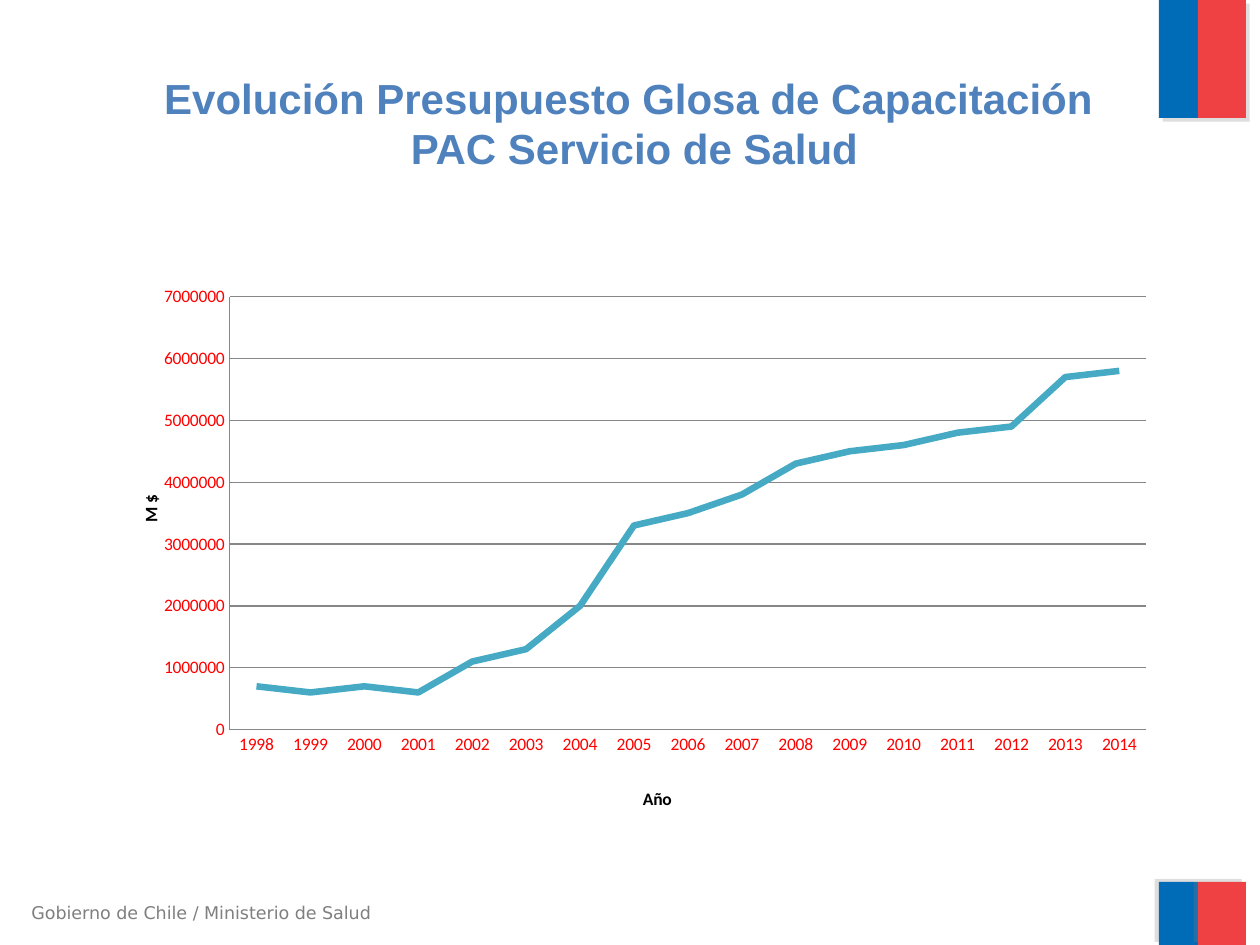
from lxml import etree
from pptx import Presentation
from pptx import util as u
from pptx.chart.data import CategoryChartData
from pptx.dml.color import RGBColor
from pptx.enum import chart as charts, shapes, text
from pptx.oxml import parse_xml
from pptx.oxml.ns import nsdecls, qn

BLUE, RED = "006CB7", "EF4144"
GREY, AXIS_RED, TEAL = "878787", "FF0000", "46AAC4"
BUDGET = dict(zip(range(1998, 2015), [
    700000, 600000, 700000, 600000, 1100000, 1300000, 2000000, 3300000, 3500000,
    3800000, 4300000, 4500000, 4600000, 4800000, 4900000, 5700000, 5800000]))


def px(length):
    return u.Emu(round(length * 914400 / 126))


def color(value):
    return RGBColor.from_string(value)


def format_font(font, size=10, name="Calibri", fill="000000", bold=False):
    font.size, font.name, font.bold = u.Pt(size), name, bold
    font.color.rgb = color(fill)


def write(frame, content, align=text.PP_ALIGN.LEFT,
          anchor=text.MSO_ANCHOR.TOP, **font):
    frame.word_wrap = True
    frame.auto_size = text.MSO_AUTO_SIZE.NONE
    frame.vertical_anchor = anchor
    paragraph = frame.paragraphs[0]
    paragraph.text = content
    paragraph.alignment = align
    for run in paragraph.runs:
        format_font(run.font, **font)


def place(element, inner=False, **fractions):
    """Give a chart part a manual layout in fractions of the chart."""
    layout = element.find(qn("c:layout"))
    if layout is None:
        layout = etree.Element(qn("c:layout"))
        element.insert(0, layout)
    manual = etree.SubElement(layout, qn("c:manualLayout"))
    settings = {"layoutTarget": "inner"} if inner else {}
    settings |= {"xMode": "edge", "yMode": "edge"} | fractions
    for tag, value in settings.items():
        etree.SubElement(manual, qn(f"c:{tag}")).set("val", str(value))


class SlideBuilder:
    def __init__(self, presentation):
        self.slide = presentation.slides.add_slide(presentation.slide_layouts[5])

    def title(self, content, left, top, width, height):
        shape = self.slide.shapes.title
        shape.left, shape.top, shape.width, shape.height = map(
            px, (left, top, width, height))
        write(shape.text_frame, content, align=text.PP_ALIGN.CENTER,
              size=24, name="Arial", fill="4F81BD", bold=True)

    def label(self, content, left, top, width, height, **style):
        box = self.slide.shapes.add_textbox(*map(px, (left, top, width, height)))
        write(box.text_frame, content, **style)

    def block(self, left, top, width, height, fill, shadow_angle):
        shape = self.slide.shapes.add_shape(
            shapes.MSO_SHAPE.RECTANGLE, *map(px, (left, top, width, height)))
        shape.fill.solid()
        shape.fill.fore_color.rgb = color(fill)
        shape.line.fill.background()
        shape.shadow.inherit = False
        effects = shape.element.spPr.find(qn("a:effectLst"))
        effects.append(parse_xml(
            f'<a:outerShdw {nsdecls("a")} blurRad="0" dist="{u.Pt(3)}" '
            f'dir="{shadow_angle * 60000}" algn="ctr" rotWithShape="0">'
            '<a:srgbClr val="808080"><a:alpha val="25000"/></a:srgbClr>'
            '</a:outerShdw>'))

    def flag(self, top, height, shadow_angle):
        self.block(1159, top, 39, height, BLUE, shadow_angle)
        self.block(1198, top, 48, height, RED, shadow_angle)

    def axis(self, axis, name, x, y):
        axis.major_tick_mark = axis.minor_tick_mark = charts.XL_TICK_MARK.NONE
        axis.format.line.color.rgb = color(GREY)
        axis.format.line.width = u.Pt(0.75)
        format_font(axis.tick_labels.font, fill=AXIS_RED)
        write_title = axis.axis_title.text_frame.paragraphs[0].add_run()
        write_title.text = name
        format_font(write_title.font, bold=True)
        place(axis.axis_title.element, x=x, y=y)

    def line_chart(self, values, left, top, width, height):
        data = CategoryChartData()
        data.categories = [str(year) for year in values]
        data.add_series("Series 1", values.values())
        chart = self.slide.shapes.add_chart(
            charts.XL_CHART_TYPE.LINE, *map(px, (left, top, width, height)), data).chart
        chart.has_title = chart.has_legend = False
        format_font(chart.font)
        chart.plots[0].vary_by_categories = False
        series = chart.plots[0].series[0]
        series.smooth = False
        series.marker.style = charts.XL_MARKER_STYLE.NONE
        series.format.line.color.rgb = color(TEAL)
        series.format.line.width = u.Pt(3.75)

        self.axis(chart.category_axis, "Año", x=0.49, y=0.94)
        value_axis = chart.value_axis
        self.axis(value_axis, "M $", x=0.02, y=0.44)
        value_axis.minimum_scale, value_axis.maximum_scale = 0, 7000000
        value_axis.major_unit = 1000000
        grid = value_axis.major_gridlines.format.line
        grid.color.rgb, grid.width = color(GREY), u.Pt(0.75)
        place(chart.element.xpath("c:chart/c:plotArea")[0], inner=True,
              x=0.107, y=0.107, w=0.856, h=0.739)


def main():
    presentation = Presentation()
    presentation.slide_width, presentation.slide_height = px(1260), px(945)
    builder = SlideBuilder(presentation)
    builder.flag(0, 118, shadow_angle=45)
    builder.flag(882, 63, shadow_angle=215)
    builder.label("Gobierno de Chile / Ministerio de Salud", 19, 895, 380, 34,
                  anchor=text.MSO_ANCHOR.MIDDLE, name="DejaVu Sans", fill="7F7F7F")
    builder.line_chart(BUDGET, 115, 234, 1071, 586)
    builder.title("Evolución Presupuesto Glosa de Capacitación \vPAC Servicio de Salud",
                  63, 66, 1143, 130)
    presentation.save("out.pptx")


if __name__ == "__main__":
    main()
